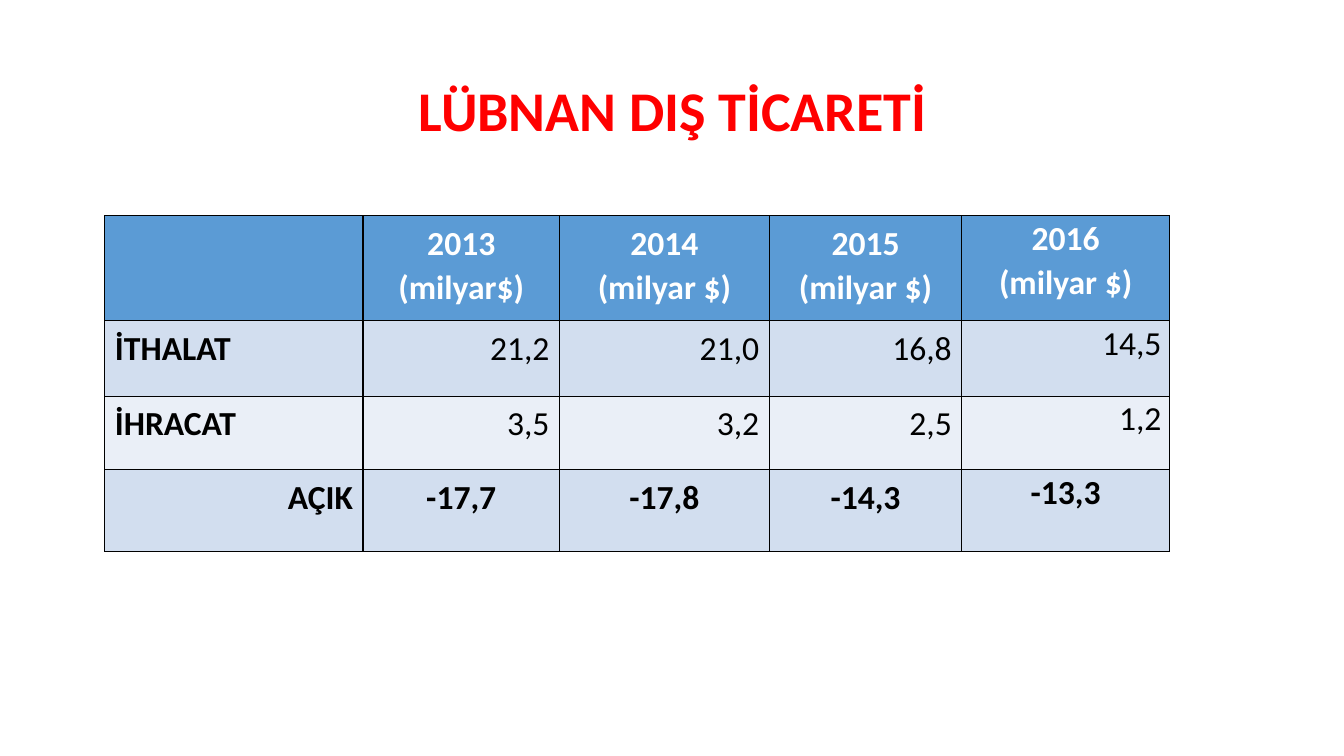
"""Build a slide with a table of Lebanon's foreign trade."""
from dataclasses import dataclass

from lxml import etree
from pptx import Presentation
from pptx import util as u
from pptx.dml.color import RGBColor
from pptx.enum import text as t
from pptx.oxml import ns

COLORS = {
    "title": "FF0000",
    "header": "5B9BD5",
    "header_text": "FFFFFF",
    "dark_band": "D2DEEF",
    "light_band": "EAEFF7",
    "text": "000000",
    "border": "000000",
}
LEFT, CENTER, RIGHT = t.PP_ALIGN.LEFT, t.PP_ALIGN.CENTER, t.PP_ALIGN.RIGHT
COLUMN_WIDTHS = (2.56, 1.95, 2.08, 1.91, 2.06)


@dataclass
class TradeRow:
    height: float
    fill: str
    label: str
    values: tuple
    label_align: t.PP_ALIGN = LEFT
    value_align: t.PP_ALIGN = RIGHT
    bold_values: bool = False
    color: str = "text"


ROWS = (
    TradeRow(1.04, "header", "",
             ("2013\n(milyar$)", "2014\n(milyar $)", "2015\n(milyar $)", "2016\n(milyar $)"),
             value_align=CENTER, bold_values=True, color="header_text"),
    TradeRow(0.75, "dark_band", "İTHALAT", ("21,2", "21,0", "16,8", "14,5")),
    TradeRow(0.73, "light_band", "İHRACAT", ("3,5", "3,2", "2,5", "1,2")),
    TradeRow(0.81, "dark_band", "AÇIK", ("-17,7", "-17,8", "-14,3", "-13,3"),
             label_align=RIGHT, value_align=CENTER, bold_values=True),
)


def write_text(frame, content: str, *, size: float = 24, color: str = "text", bold: bool = True,
               align: t.PP_ALIGN = LEFT, line_spacing: float = 1.07) -> None:
    for index, line in enumerate(content.split("\n")):
        paragraph = frame.add_paragraph() if index else frame.paragraphs[0]
        paragraph.alignment = align
        paragraph.line_spacing = line_spacing
        if not line:
            continue
        run = paragraph.add_run()
        run.text = line
        run.font.name = "Calibri"
        run.font.size = u.Pt(size)
        run.font.bold = bold
        run.font.color.rgb = RGBColor.from_string(COLORS[color])


def add_borders(cell) -> None:
    properties = cell._tc.get_or_add_tcPr()
    for side in ("lnL", "lnR", "lnT", "lnB"):
        line = etree.SubElement(properties, ns.qn(f"a:{side}"), w=str(u.Pt(1)))
        fill = etree.SubElement(line, ns.qn("a:solidFill"))
        etree.SubElement(fill, ns.qn("a:srgbClr"), val=COLORS["border"])


def draw_title(slide) -> None:
    box = slide.shapes.add_textbox(u.Inches(0.92), u.Inches(0.4), u.Inches(11.5), u.Inches(1.45))
    box.text_frame.word_wrap = True
    box.text_frame.vertical_anchor = t.MSO_ANCHOR.MIDDLE
    write_text(box.text_frame, "LÜBNAN DIŞ TİCARETİ", size=40, color="title",
               align=CENTER, line_spacing=0.9)


def draw_row(table, row_index: int, row: TradeRow) -> None:
    table.rows[row_index].height = u.Inches(row.height)
    for column, content in enumerate((row.label, *row.values)):
        cell = table.cell(row_index, column)
        add_borders(cell)
        cell.fill.solid()
        cell.fill.fore_color.rgb = RGBColor.from_string(COLORS[row.fill])
        align = row.value_align if column else row.label_align
        if column == len(row.values):
            cell.margin_left = cell.margin_top = cell.margin_bottom = 0
            cell.margin_right = u.Inches(0.08 if align == RIGHT else 0)
        write_text(cell.text_frame, content, color=row.color, align=align,
                   bold=row.bold_values or column == 0)


def draw_table(slide) -> None:
    table = slide.shapes.add_table(
        len(ROWS), len(COLUMN_WIDTHS), u.Inches(1.04), u.Inches(2.14),
        u.Inches(sum(COLUMN_WIDTHS)), u.Inches(sum(row.height for row in ROWS))).table
    for column, width in zip(table.columns, COLUMN_WIDTHS):
        column.width = u.Inches(width)
    for row_index, row in enumerate(ROWS):
        draw_row(table, row_index, row)


def main() -> None:
    presentation = Presentation()
    presentation.slide_width = u.Inches(13.33)
    presentation.slide_height = u.Inches(7.5)
    slide = presentation.slides.add_slide(presentation.slide_layouts[6])
    draw_title(slide)
    draw_table(slide)
    presentation.save("out.pptx")


if __name__ == "__main__":
    main()
